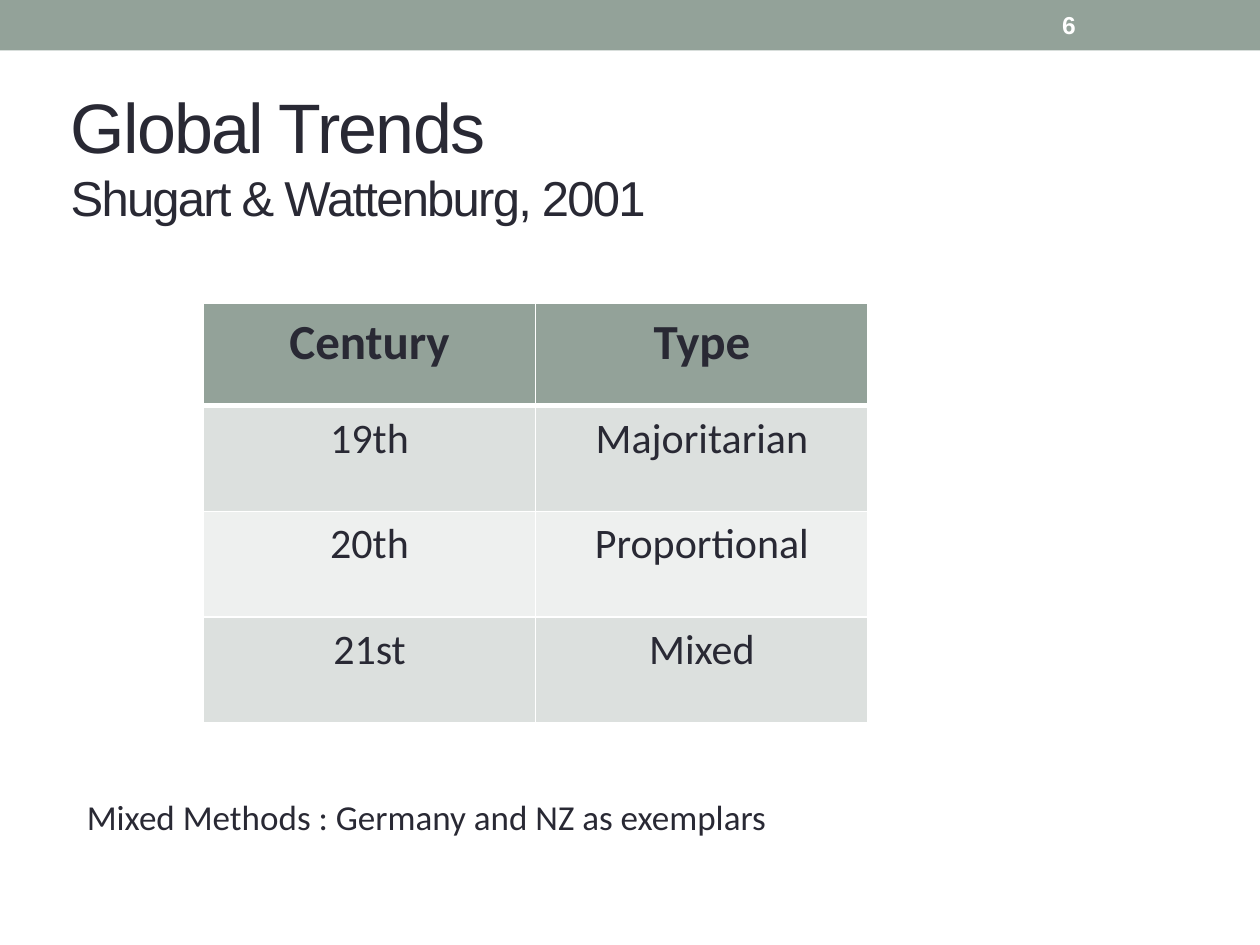
import copy

import pptx
import pptx.dml.color
import pptx.enum.shapes
import pptx.enum.text
import pptx.oxml
import pptx.oxml.ns
import pptx.util
from pptx.util import Cm

COLORS = {
    "sage": "93A299",
    "ink": "292934",
    "white": "FFFFFF",
    "band": "DCE0DE",
    "light_band": "EEF0EF",
}


def rgb(name):
    return pptx.dml.color.RGBColor.from_string(COLORS[name])


class TrendSlide:
    heading_font = "Arial"
    body_font = "Calibri"

    def __init__(self, slide):
        self.slide = slide

    def place(self, shape, left, top, width, height):
        shape.left, shape.top = Cm(left), Cm(top)
        shape.width, shape.height = Cm(width), Cm(height)

    def format_run(self, run, size, font, color="ink", bold=False):
        run.font.size = pptx.util.Pt(size)
        run.font.name = font
        run.font.bold = bold
        run.font.color.rgb = rgb(color)

    def banner(self, left, top, width, height):
        bar = self.slide.shapes.add_shape(
            pptx.enum.shapes.MSO_SHAPE.RECTANGLE,
            Cm(left), Cm(top), Cm(width), Cm(height))
        bar.shadow.inherit = False
        bar.fill.solid()
        bar.fill.fore_color.rgb = rgb("sage")
        bar.line.fill.background()

    def title(self, heading, source, left, top, width, height):
        title = self.slide.shapes.title
        self.place(title, left, top, width, height)
        frame = title.text_frame
        frame.text = heading + "\v" + source
        frame.word_wrap = True
        frame.auto_size = pptx.enum.text.MSO_AUTO_SIZE.NONE
        frame.vertical_anchor = pptx.enum.text.MSO_ANCHOR.MIDDLE
        paragraph = frame.paragraphs[0]
        paragraph.alignment = pptx.enum.text.PP_ALIGN.LEFT
        for run, size in zip(paragraph.runs, (40, 28)):
            self.format_run(run, size, self.heading_font)
            run.font._element.set("spc", "-100")
        line_break = paragraph._p.find(pptx.oxml.ns.qn("a:br"))
        line_break.append(copy.deepcopy(paragraph.runs[0].font._element))

    def text(self, words, left, top, width, height, size, font,
             color="ink", bold=False, anchor=pptx.enum.text.MSO_ANCHOR.TOP):
        box = self.slide.shapes.add_textbox(
            Cm(left), Cm(top), Cm(width), Cm(height))
        frame = box.text_frame
        frame.text = words
        frame.word_wrap = True
        frame.vertical_anchor = anchor
        self.format_run(frame.paragraphs[0].runs[0], size, font, color, bold)

    def cell_borders(self, cell, bottom_width):
        properties = cell._tc.get_or_add_tcPr()
        widths = {"lnL": 1, "lnR": 1, "lnT": 1, "lnB": bottom_width}
        for side, width in widths.items():
            properties.append(pptx.oxml.parse_xml(
                f'<a:{side} {pptx.oxml.ns.nsdecls("a")} w="{pptx.util.Pt(width)}">'
                f'<a:solidFill><a:srgbClr val="{COLORS["white"]}"/></a:solidFill>'
                f'</a:{side}>'))

    def cell(self, cell, words, fill, size, bold, bottom_width):
        cell.text_frame.text = words
        cell.margin_left = cell.margin_right = Cm(0.18)
        cell.margin_top = cell.margin_bottom = Cm(0)
        paragraph = cell.text_frame.paragraphs[0]
        paragraph.alignment = pptx.enum.text.PP_ALIGN.CENTER
        paragraph.line_spacing = 1.15
        paragraph.space_before = paragraph.space_after = pptx.util.Pt(6)
        self.format_run(paragraph.runs[0], size, self.body_font, bold=bold)
        self.cell_borders(cell, bottom_width)
        cell.fill.solid()
        cell.fill.fore_color.rgb = rgb(fill)

    def table(self, rows, left, top, column_width, row_heights):
        columns = len(rows[0])
        table = self.slide.shapes.add_table(
            len(rows), columns, Cm(left), Cm(top),
            Cm(column_width * columns), Cm(sum(row_heights))).table
        for column in table.columns:
            column.width = Cm(column_width)
        for r, (row, height) in enumerate(zip(rows, row_heights)):
            table.rows[r].height = Cm(height)
            if r == 0:
                style = ("sage", 28, True, 3)
            else:
                style = ("band" if r % 2 else "light_band", 24, False, 1)
            for c, words in enumerate(row):
                self.cell(table.cell(r, c), words, *style)


def main():
    deck = pptx.Presentation()
    deck.slide_width, deck.slide_height = Cm(25.4), Cm(19.05)
    trends = TrendSlide(deck.slides.add_slide(deck.slide_layouts[5]))
    trends.banner(0, 0, 25.4, 1.02)
    trends.title("Global Trends", "Shugart & Wattenburg, 2001",
                 1.17, 1.32, 24.2, 3.6)
    trends.text("6", 21.16, 0.05, 2.97, 0.91, 14, trends.heading_font,
                "white", True, pptx.enum.text.MSO_ANCHOR.MIDDLE)
    trends.table(
        [("Century", "Type"),
         ("19th", "Majoritarian"),
         ("20th", "Proportional"),
         ("21st", "Mixed")],
        4.1, 6.12, 6.7, [2.06] + [2.13] * 3)
    trends.text("Mixed Methods : Germany and NZ as exemplars",
                1.5, 15.92, 21, 1.11, 20, trends.body_font)
    deck.save("out.pptx")


if __name__ == "__main__":
    main()
